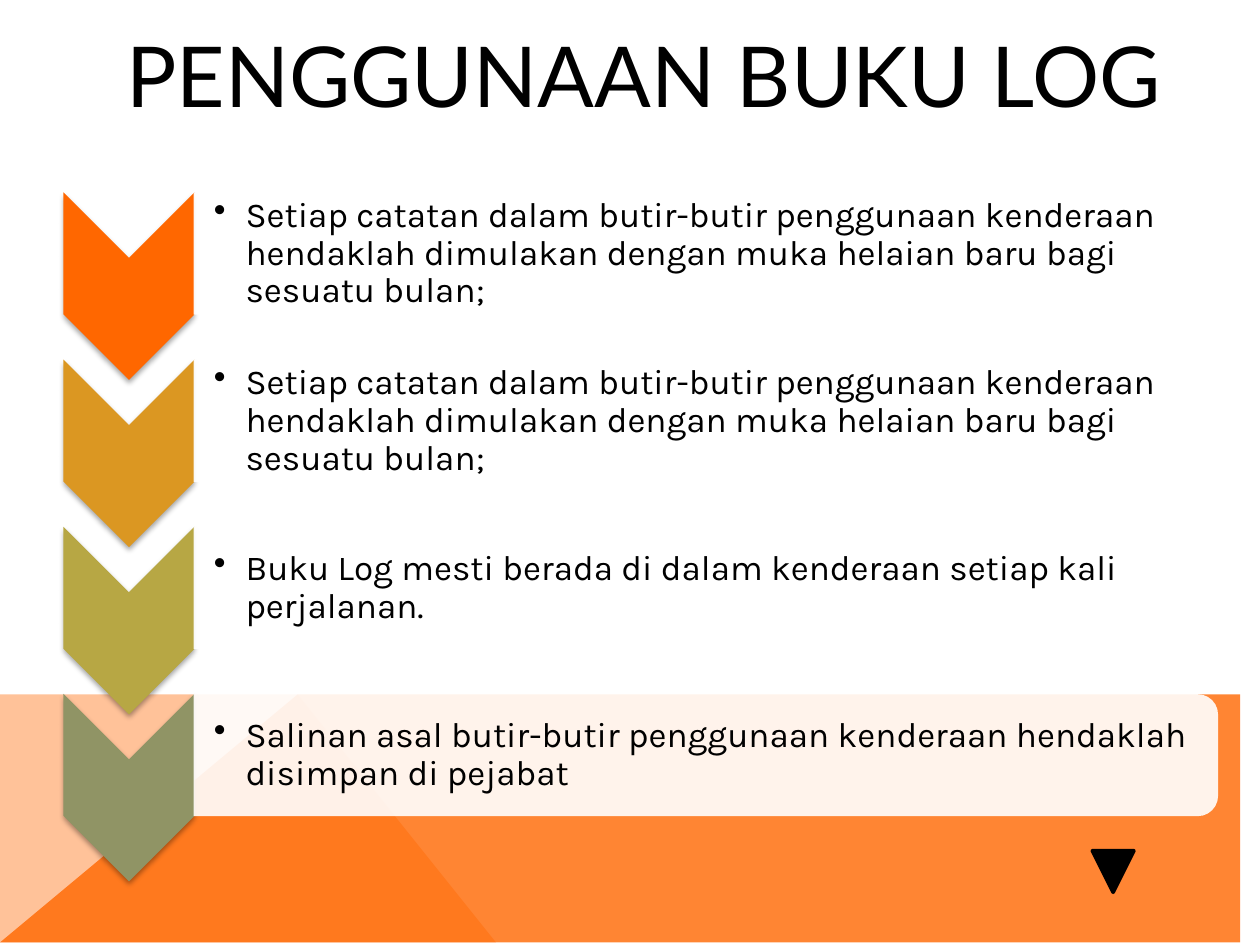
import pptx
import pptx.dml.color
import pptx.enum.shapes
import pptx.enum.text
import pptx.oxml
import pptx.oxml.ns
import pptx.util
from lxml import etree

Cm = pptx.util.Cm
Pt = pptx.util.Pt
SHAPES = pptx.enum.shapes.MSO_SHAPE
ALIGN = pptx.enum.text.PP_ALIGN

REPEATED_RULE = (
    "Setiap catatan dalam butir-butir penggunaan kenderaan hendaklah "
    "dimulakan dengan muka helaian baru bagi sesuatu bulan;"
)
RULES = [
    ("FF6700", REPEATED_RULE),
    ("DB9722", REPEATED_RULE),
    ("B7A744", "Buku Log mesti berada di dalam kenderaan setiap kali perjalanan."),
    ("909465", "Salinan asal butir-butir penggunaan kenderaan hendaklah disimpan di pejabat"),
]
ROW_PITCH = 3.37


def color(code):
    return pptx.dml.color.RGBColor.from_string(code)


def paint(shape, code, opacity=100):
    shape.shadow.inherit = False
    shape.fill.solid()
    shape.fill.fore_color.rgb = color(code)
    shape.line.fill.background()
    if opacity < 100:
        tint = shape.fill._xPr.find(".//" + pptx.oxml.ns.qn("a:srgbClr"))
        etree.SubElement(tint, pptx.oxml.ns.qn("a:alpha"), val=str(opacity * 1000))


def add_shadow(shape):
    effects = shape._element.spPr.find(pptx.oxml.ns.qn("a:effectLst"))
    effects.append(pptx.oxml.parse_xml(
        f'<a:outerShdw {pptx.oxml.ns.nsdecls("a")} blurRad="{Pt(3.1)}" dist="{Pt(1.8)}" '
        'dir="5400000" rotWithShape="0"><a:srgbClr val="000000">'
        '<a:alpha val="35000"/></a:srgbClr></a:outerShdw>'
    ))


def add_bullet(para):
    properties = para._p.get_or_add_pPr()
    properties.set("marL", str(Cm(0.64)))
    properties.set("indent", str(-Cm(0.64)))
    etree.SubElement(properties, pptx.oxml.ns.qn("a:buChar"), char="•")


def add_polygon(page, points, code, opacity=100):
    builder = page.shapes.build_freeform(*points[0], scale=Cm(1))
    builder.add_line_segments(points[1:], close=True)
    paint(builder.convert_to_shape(), code, opacity)


def add_preset(page, kind, left, top, width, height, code, opacity=100, rotation=0):
    shape = page.shapes.add_shape(kind, Cm(left), Cm(top), Cm(width), Cm(height))
    shape.rotation = rotation
    paint(shape, code, opacity)
    return shape


def add_text(page, text, left, top, width, height, font, size, align, inset=0):
    box = page.shapes.add_textbox(Cm(left), Cm(top), Cm(width), Cm(height))
    frame = box.text_frame
    frame.word_wrap = True
    frame.vertical_anchor = pptx.enum.text.MSO_ANCHOR.MIDDLE
    frame.margin_left = Cm(inset)
    frame.margin_top = frame.margin_right = frame.margin_bottom = Cm(0.03)
    frame.text = text
    para = frame.paragraphs[0]
    para.alignment = align
    span = para.runs[0]
    span.font.name = font
    span.font.size = Pt(size)
    span.font.color.rgb = color("000000")
    return para


def add_background(page):
    add_polygon(page, [(0, 19.05), (0, 14.02), (5.66, 14.02), (9.93, 19.05)], "FFC299")
    add_polygon(page, [(0, 19.05), (5.66, 14.02), (25.4, 14.05), (25.4, 19.05)], "FF6700", 80)


def add_rule(page, row, code, text):
    offset = row * ROW_PITCH
    chevron = add_preset(page, SHAPES.CHEVRON, 0.71, 4.45 + offset, 3.78, 2.64, code, rotation=90)
    add_shadow(chevron)
    add_preset(page, SHAPES.ROUND_2_SAME_RECTANGLE, 13, -5.21 + offset, 2.46, 20.65,
               "FFFFFF", 90, 90)
    para = add_text(page, text, 3.91, 4.01 + offset, 20.52, 2.21, "Karla", 20, ALIGN.LEFT, 0.4)
    para.line_spacing = 0.9
    add_bullet(para)


def main():
    deck = pptx.Presentation()
    deck.slide_width, deck.slide_height = Cm(25.4), Cm(19.05)
    page = deck.slides.add_slide(deck.slide_layouts[6])
    add_background(page)
    add_text(page, "PENGGUNAAN BUKU LOG", 2.29, 0, 21.41, 3, "Lato", 48, ALIGN.CENTER)
    for row, (code, text) in enumerate(RULES):
        add_rule(page, row, code, text)
    marker = add_preset(page, SHAPES.FLOWCHART_MERGE, 22.02, 17.15, 0.84, 0.84, "000000")
    marker.line.color.rgb = color("000000")
    marker.line.width = Pt(2)
    deck.save("out.pptx")


if __name__ == "__main__":
    main()
